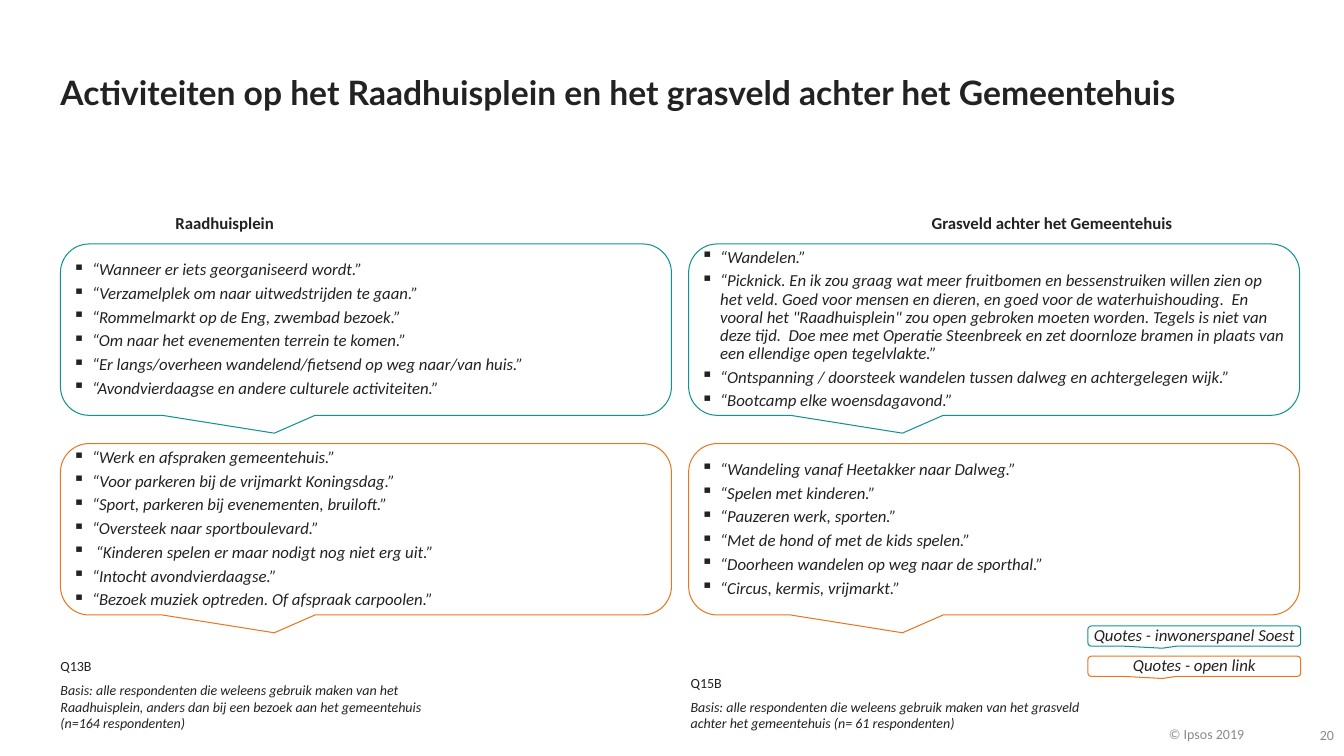
from dataclasses import dataclass

from lxml.etree import SubElement
from pptx import Presentation
from pptx.dml.color import RGBColor
from pptx.enum.shapes import MSO_SHAPE as Preset
from pptx.enum.text import MSO_ANCHOR as Anchor, PP_ALIGN as Align
from pptx.oxml.ns import qn
from pptx.shapes.autoshape import Shape
from pptx.slide import Slide
from pptx.util import Emu, Inches, Pt

INK = RGBColor(0x22, 0x22, 0x23)
GREY = RGBColor(0x88, 0x8B, 0x8D)
TEAL = RGBColor(0x14, 0x92, 0x91)
ORANGE = RGBColor(0xE8, 0x77, 0x22)

SLIDE_WIDTH, SLIDE_HEIGHT = Inches(13.33), Inches(7.5)
LEFT_COLUMN, RIGHT_COLUMN = 4.5, 51.24
PANEL_ROW, LINK_ROW = 32.27, 58.67
POINTER = (-0.15, 0.604, 0.167)


@dataclass(frozen=True)
class Box:
    """Place and size in percent of the slide's width and height."""
    left: float
    top: float
    width: float
    height: float

    def lengths(self) -> tuple[Emu, Emu, Emu, Emu]:
        return (Emu(round(SLIDE_WIDTH * self.left / 100)),
                Emu(round(SLIDE_HEIGHT * self.top / 100)),
                Emu(round(SLIDE_WIDTH * self.width / 100)),
                Emu(round(SLIDE_HEIGHT * self.height / 100)))


@dataclass(frozen=True)
class Style:
    size: float = 12
    font: str = "Calibri"
    color: RGBColor = INK
    bold: bool = False
    italic: bool = False
    align: Align = Align.LEFT
    anchor: Anchor = Anchor.TOP
    line_spacing: float = 0.9
    gap: float = 4
    margin: float = 0
    bullet: str = ""
    wrap: bool = True


@dataclass(frozen=True)
class Label:
    box: Box
    text: str
    style: Style


@dataclass(frozen=True)
class Callout:
    box: Box
    color: RGBColor
    text: str
    style: Style


@dataclass(frozen=True)
class Footnote:
    left: float
    question: str
    basis: str


TITLE = Style(size=24, font="Lato", bold=True)
HEADING = Style(bold=True)
FOOTER = Style(size=10, color=GREY, align=Align.RIGHT, anchor=Anchor.BOTTOM, line_spacing=0.85)
NOTE = Style(size=10, anchor=Anchor.BOTTOM, line_spacing=1, gap=5)
QUOTE = Style(italic=True, anchor=Anchor.MIDDLE, margin=0.04, bullet="▪")
LEGEND = Style(italic=True, align=Align.CENTER, anchor=Anchor.MIDDLE, margin=0.04, wrap=False)

LABELS = [
    Label(Box(LEFT_COLUMN, 10.13, 88.97, 4.93),
          "Activiteiten op het Raadhuisplein en het grasveld achter het Gemeentehuis", TITLE),
    Label(Box(13.05, 28.4, 27.31, 3.2), "Raadhuisplein", HEADING),
    Label(Box(69.32, 28.4, 22.96, 3.2), "Grasveld achter het Gemeentehuis", HEADING),
    Label(Box(85.37, 94.93, 7.2, 3.33), "© Ipsos 2019", FOOTER),
    Label(Box(95.87, 93.6, 3.38, 4.67), "20", FOOTER),
]

FOOTNOTES = [
    Footnote(LEFT_COLUMN, "Q13B",
             "Basis: alle respondenten die weleens gebruik maken van het Raadhuisplein, "
             "anders dan bij een bezoek aan het gemeentehuis (n=164 respondenten)"),
    Footnote(51.39, "Q15B",
             "Basis: alle respondenten die weleens gebruik maken van het grasveld "
             "achter het gemeentehuis (n= 61 respondenten)"),
]


def quotes(left: float, top: float, color: RGBColor, *lines: str) -> Callout:
    return Callout(Box(left, top, 45.46, 22.67), color, "\n".join(lines), QUOTE)


def legend(top: float, color: RGBColor, text: str) -> Callout:
    return Callout(Box(80.95, top, 15.83, 2.67), color, text, LEGEND)


CALLOUTS = [
    quotes(LEFT_COLUMN, PANEL_ROW, TEAL,
           "“Wanneer er iets georganiseerd wordt.”",
           "“Verzamelplek om naar uitwedstrijden te gaan.”",
           "“Rommelmarkt op de Eng, zwembad bezoek.”",
           "“Om naar het evenementen terrein te komen.”",
           "“Er langs/overheen wandelend/fietsend op weg naar/van huis.”",
           "“Avondvierdaagse en andere culturele activiteiten.”"),
    quotes(LEFT_COLUMN, LINK_ROW, ORANGE,
           "“Werk en afspraken gemeentehuis.”",
           "“Voor parkeren bij de vrijmarkt Koningsdag.”",
           "“Sport, parkeren bij evenementen, bruiloft.”",
           "“Oversteek naar sportboulevard.”",
           " “Kinderen spelen er maar nodigt nog niet erg uit.”",
           "“Intocht avondvierdaagse.”",
           "“Bezoek muziek optreden. Of afspraak carpoolen.”"),
    quotes(RIGHT_COLUMN, PANEL_ROW, TEAL,
           "“Wandelen.”",
           "“Picknick. En ik zou graag wat meer fruitbomen en bessenstruiken willen zien op "
           "het veld. Goed voor mensen en dieren, en goed voor de waterhuishouding.  En "
           "vooral het \"Raadhuisplein\" zou open gebroken moeten worden. Tegels is niet van "
           "deze tijd.  Doe mee met Operatie Steenbreek en zet doornloze bramen in plaats van "
           "een ellendige open tegelvlakte.”",
           "“Ontspanning / doorsteek wandelen tussen dalweg en achtergelegen wijk.”",
           "“Bootcamp elke woensdagavond.”"),
    quotes(RIGHT_COLUMN, LINK_ROW, ORANGE,
           "“Wandeling vanaf Heetakker naar Dalweg.”",
           "“Spelen met kinderen.”",
           "“Pauzeren werk, sporten.”",
           "“Met de hond of met de kids spelen.”",
           "“Doorheen wandelen op weg naar de sporthal.”",
           "“Circus, kermis, vrijmarkt.”"),
    legend(82.8, TEAL, "Quotes - inwonerspanel Soest"),
    legend(86.8, ORANGE, "Quotes - open link"),
]


def write(shape: Shape, text: str, style: Style) -> None:
    frame = shape.text_frame
    frame.text = text
    frame.word_wrap = style.wrap
    frame.vertical_anchor = style.anchor
    frame.margin_left = frame.margin_right = Inches(style.margin)
    frame.margin_top = frame.margin_bottom = Inches(style.margin)
    for index, paragraph in enumerate(frame.paragraphs):
        paragraph.alignment = style.align
        paragraph.line_spacing = style.line_spacing
        paragraph.space_before = Pt(style.gap if index else 0)
        if style.bullet:
            properties = paragraph._p.get_or_add_pPr()
            properties.set("marL", str(Inches(0.19)))
            properties.set("indent", str(-Inches(0.19)))
            SubElement(properties, qn("a:buChar"), char=style.bullet)
        for run in paragraph.runs:
            run.font.name = style.font
            run.font.size = Pt(style.size)
            run.font.bold = style.bold
            run.font.italic = style.italic
            run.font.color.rgb = style.color


def draw_label(slide: Slide, label: Label) -> Shape:
    shape = slide.shapes.add_textbox(*label.box.lengths())
    write(shape, label.text, label.style)
    return shape


def draw_footnote(slide: Slide, note: Footnote) -> None:
    box = Box(note.left, 86.67, 29.41, 10.13)
    shape = draw_label(slide, Label(box, f"{note.question}\n{note.basis}", NOTE))
    for run in shape.text_frame.paragraphs[1].runs:
        run.font.italic = True


def draw_callout(slide: Slide, callout: Callout) -> None:
    shape = slide.shapes.add_shape(Preset.ROUNDED_RECTANGULAR_CALLOUT, *callout.box.lengths())
    for index, value in enumerate(POINTER):
        shape.adjustments[index] = value
    shape.shadow.inherit = False
    shape.fill.background()
    shape.line.color.rgb = callout.color
    shape.line.width = Pt(0.75)
    write(shape, callout.text, callout.style)


def main() -> None:
    presentation = Presentation()
    presentation.slide_width, presentation.slide_height = SLIDE_WIDTH, SLIDE_HEIGHT
    slide = presentation.slides.add_slide(presentation.slide_layouts[6])
    for label in LABELS:
        draw_label(slide, label)
    for note in FOOTNOTES:
        draw_footnote(slide, note)
    for callout in CALLOUTS:
        draw_callout(slide, callout)
    presentation.save("out.pptx")


if __name__ == "__main__":
    main()
